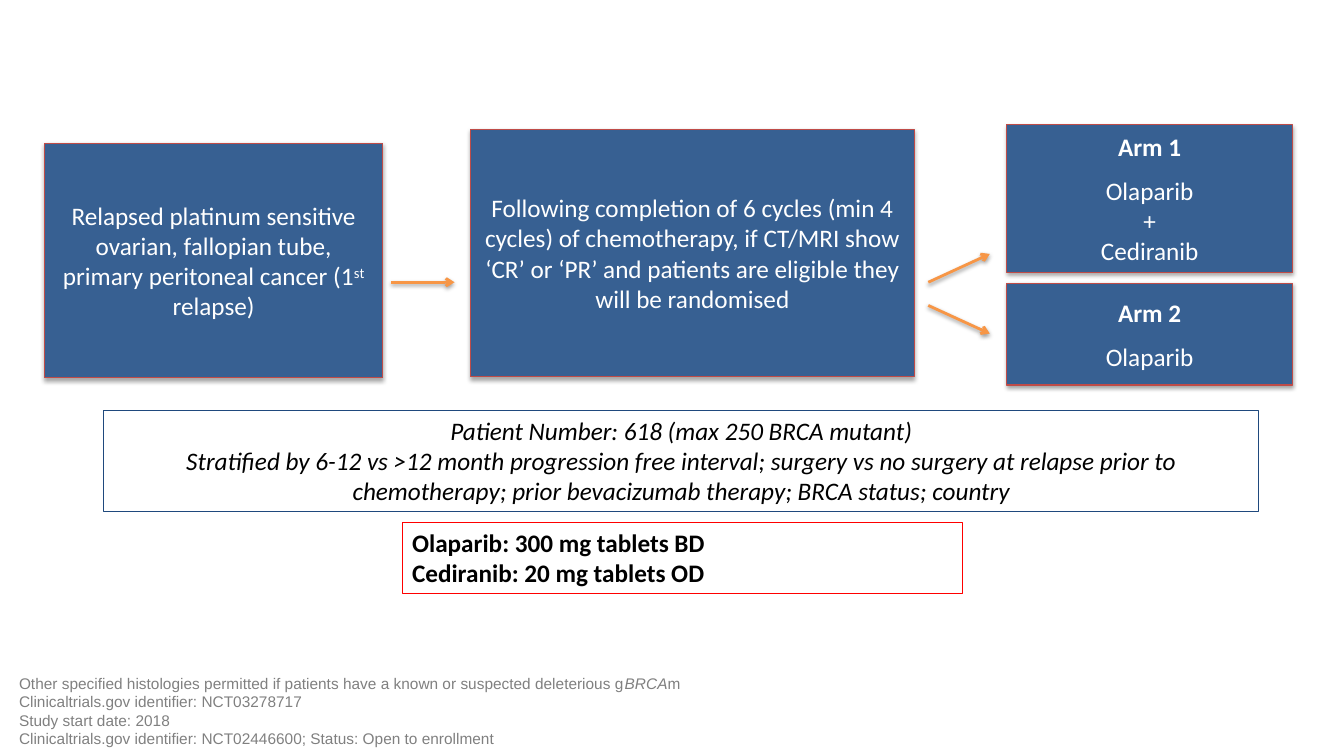
from dataclasses import dataclass, field
from typing import Optional

from lxml.etree import SubElement
from pptx import Presentation
from pptx.dml.color import RGBColor
from pptx.enum.shapes import MSO_CONNECTOR as Connector, MSO_SHAPE as Preset
from pptx.enum.text import MSO_ANCHOR as Anchor, MSO_AUTO_SIZE as AutoSize, PP_ALIGN as Align
from pptx.oxml.ns import qn
from pptx.util import Pt

WHITE = RGBColor(0xFF, 0xFF, 0xFF)
BLACK = RGBColor(0x00, 0x00, 0x00)
GREY = RGBColor(0x80, 0x80, 0x80)
STEP_BLUE = RGBColor(0x37, 0x60, 0x92)
STEP_EDGE = RGBColor(0xBF, 0x4C, 0x48)
NAVY = RGBColor(0x1F, 0x49, 0x7D)
RED = RGBColor(0xFF, 0x00, 0x00)
ORANGE = RGBColor(0xF7, 0x96, 0x46)


@dataclass
class Span:
    text: str
    bold: bool = False
    italic: bool = False
    superscript: bool = False


@dataclass
class Line:
    spans: list[Span]
    space_after: float = 0


@dataclass
class TextStyle:
    color: RGBColor
    size: float = 18
    font: str = "Calibri"
    align: Align = Align.CENTER
    anchor: Anchor = Anchor.MIDDLE
    auto_size: AutoSize = AutoSize.NONE


@dataclass
class Box:
    left: float
    top: float
    width: float
    height: float
    lines: list[Line]
    style: TextStyle = field(default_factory=lambda: TextStyle(WHITE))
    fill: Optional[RGBColor] = STEP_BLUE
    edge: RGBColor = STEP_EDGE


@dataclass
class Arrow:
    x1: float
    y1: float
    x2: float
    y2: float


def line(text: str, bold: bool = False, italic: bool = False, space_after: float = 0) -> Line:
    return Line([Span(text, bold, italic)], space_after)


def write_text(frame, lines: list[Line], style: TextStyle) -> None:
    frame.word_wrap = True
    frame.auto_size = style.auto_size
    frame.vertical_anchor = style.anchor
    for index, content in enumerate(lines):
        paragraph = frame.paragraphs[0] if index == 0 else frame.add_paragraph()
        paragraph.alignment = style.align
        paragraph.space_after = Pt(content.space_after)
        for span in content.spans:
            run = paragraph.add_run()
            run.text = span.text
            font = run.font
            font.name, font.size = style.font, Pt(style.size)
            font.bold, font.italic = span.bold, span.italic
            font.color.rgb = style.color
            if span.superscript:
                run._r.get_or_add_rPr().set("baseline", "30000")


def add_shadow(effects, distance: float, opacity: int) -> None:
    shadow = SubElement(effects, qn("a:outerShdw"), blurRad=str(Pt(3.1)),
                        dist=str(Pt(distance)), dir="5400000", rotWithShape="0")
    color = SubElement(shadow, qn("a:srgbClr"), val="000000")
    SubElement(color, qn("a:alpha"), val=str(opacity * 1000))


def draw_box(slide, box: Box) -> None:
    shape = slide.shapes.add_shape(Preset.RECTANGLE, Pt(box.left), Pt(box.top),
                                   Pt(box.width), Pt(box.height))
    shape.shadow.inherit = False
    shape.line.color.rgb = box.edge
    shape.line.width = Pt(0.75)
    if box.fill is None:
        shape.fill.background()
    else:
        shape.fill.solid()
        shape.fill.fore_color.rgb = box.fill
        add_shadow(shape._element.spPr.find(qn("a:effectLst")), 1.8, 35)
    write_text(shape.text_frame, box.lines, box.style)


def draw_arrow(slide, arrow: Arrow) -> None:
    connector = slide.shapes.add_connector(Connector.STRAIGHT, Pt(arrow.x1), Pt(arrow.y1),
                                           Pt(arrow.x2), Pt(arrow.y2))
    connector.line.color.rgb = ORANGE
    connector.line.width = Pt(2)
    SubElement(connector.line._get_or_add_ln(), qn("a:tailEnd"), type="arrow")
    add_shadow(SubElement(connector._element.spPr, qn("a:effectLst")), 1.6, 38)


# Trial flow: population, chemotherapy, randomised arms
ARM_LEFT, ARM_WIDTH = 719.3, 203.8
ARM_GAP = 9.8
STEPS = [
    Box(31.7, 102.2, 241.9, 167.8, [Line([
        Span("Relapsed platinum sensitive ovarian, fallopian tube, primary peritoneal cancer (1"),
        Span("st", superscript=True),
        Span(" relapse)"),
    ])]),
    Box(336.2, 92.2, 316.8, 177.1, [
        line("Following completion of 6 cycles (min 4 cycles) of chemotherapy, if CT/MRI show "
             "‘CR’ or ‘PR’ and patients are eligible they will be randomised"),
    ]),
    Box(ARM_LEFT, 89.3, ARM_WIDTH, 105.1, [
        line("Arm 1", bold=True, space_after=ARM_GAP),
        line("Olaparib"), line("+"), line("Cediranib"),
    ]),
    Box(ARM_LEFT, 202.3, ARM_WIDTH, 72.7, [
        line("Arm 2", bold=True, space_after=ARM_GAP), line("Olaparib"),
    ]),
]
ARROWS = [
    Arrow(279.4, 201.6, 324.7, 201.6),
    Arrow(663.1, 201.6, 707, 181.4),
    Arrow(663.1, 218.2, 707, 238.3),
]

# Stratification and dosing notes
NOTES = [
    Box(74.2, 293, 825.1, 72.7, [
        line("Patient Number: 618 (max 250 BRCA mutant)", italic=True),
        line("Stratified by 6-12 vs >12 month progression free interval; surgery vs no surgery "
             "at relapse prior to chemotherapy; prior bevacizumab therapy; BRCA status; country",
             italic=True),
    ], TextStyle(BLACK, anchor=Anchor.TOP, auto_size=AutoSize.SHAPE_TO_FIT_TEXT), None, NAVY),
    Box(287.3, 373, 400.3, 51.1, [
        line("Olaparib: 300 mg tablets BD", bold=True),
        line("Cediranib: 20 mg tablets OD", bold=True),
    ], TextStyle(BLACK, align=Align.LEFT, anchor=Anchor.TOP,
                 auto_size=AutoSize.SHAPE_TO_FIT_TEXT), None, RED),
]

FOOTNOTES = [
    Line([
        Span("Other specified histologies permitted if patients have a known or suspected "
             "deleterious g"),
        Span("BRCA", italic=True),
        Span("m"),
    ]),
    line("Clinicaltrials.gov identifier: NCT03278717"),
    line("Study start date: 2018"),
    line("Clinicaltrials.gov identifier: NCT02446600; Status: Open to enrollment"),
]


def main() -> None:
    deck = Presentation()
    deck.slide_width, deck.slide_height = Pt(960), Pt(540)
    slide = deck.slides.add_slide(deck.slide_layouts[6])
    for box in STEPS + NOTES:
        draw_box(slide, box)
    for arrow in ARROWS:
        draw_arrow(slide, arrow)

    # Footnotes
    footer = slide.shapes.add_textbox(Pt(6.5), Pt(477.4), Pt(627.1), Pt(60.5))
    write_text(footer.text_frame, FOOTNOTES,
               TextStyle(GREY, 11, "Arial", Align.LEFT, Anchor.BOTTOM,
                         AutoSize.SHAPE_TO_FIT_TEXT))
    deck.save("out.pptx")


if __name__ == "__main__":
    main()
